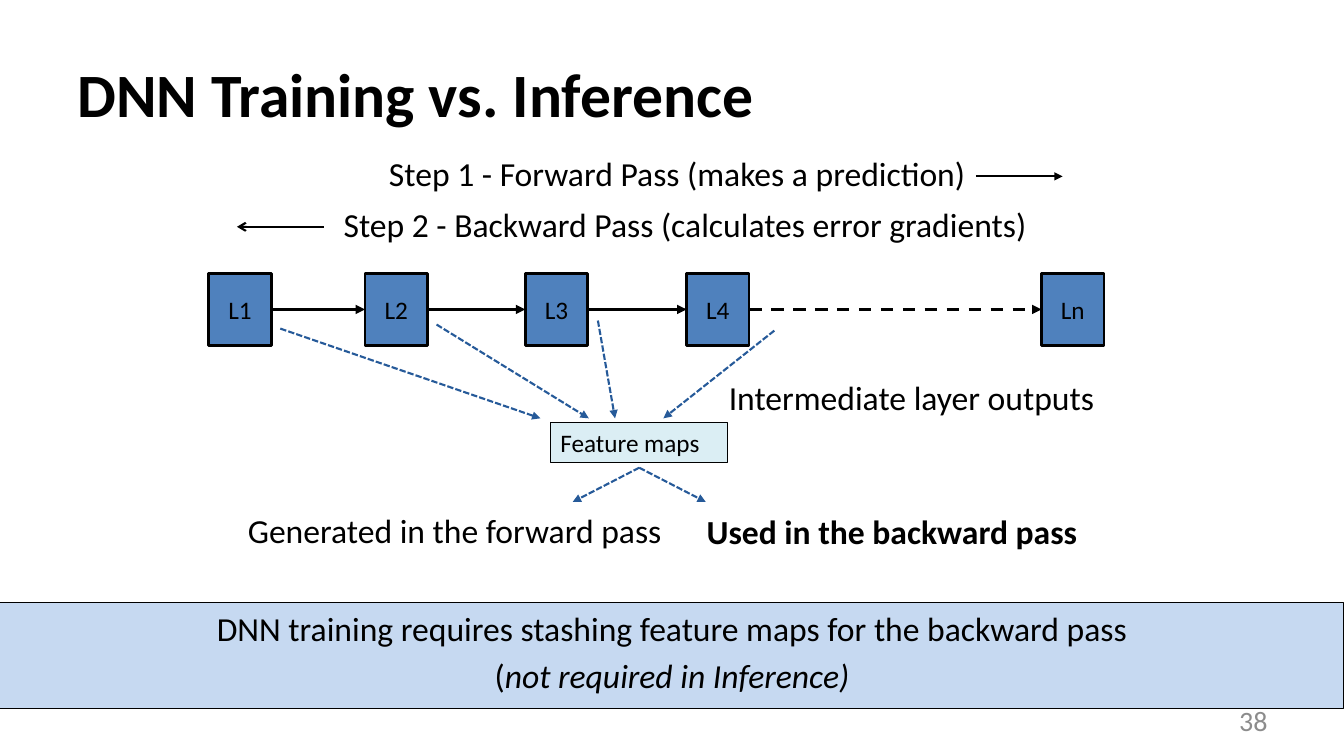
from lxml import etree
from pptx import Presentation
from pptx.dml.color import RGBColor
from pptx.enum.dml import MSO_LINE
from pptx.enum.shapes import MSO_CONNECTOR, MSO_SHAPE
from pptx.enum.text import MSO_ANCHOR, PP_ALIGN
from pptx.oxml.ns import qn
from pptx.util import Inches, Pt

BLACK = RGBColor(0x00, 0x00, 0x00)
GRAY = RGBColor(0x8C, 0x8C, 0x8C)
LAYER_BLUE = RGBColor(0x4F, 0x81, 0xBD)
FLOW_BLUE = RGBColor(0x26, 0x5A, 0x99)
MAP_FILL = RGBColor(0xDB, 0xEE, 0xF4)
BANNER_FILL = RGBColor(0xC6, 0xD9, 0xF1)

LEFT, CENTER, RIGHT = PP_ALIGN.LEFT, PP_ALIGN.CENTER, PP_ALIGN.RIGHT
TOP, MIDDLE = MSO_ANCHOR.TOP, MSO_ANCHOR.MIDDLE
DASH, SHORT_DASH = MSO_LINE.DASH, MSO_LINE.SQUARE_DOT
RECTANGLE, STRAIGHT = MSO_SHAPE.RECTANGLE, MSO_CONNECTOR.STRAIGHT

FONT = "Calibri"
LAYER_WIDTH, LAYER_HEIGHT = 0.62, 0.72


def style_text(shape, text, size, color=BLACK, bold=False, align=LEFT, anchor=TOP, wrap=False):
    """Fill a shape with text in one style."""
    frame = shape.text_frame
    frame.text = text
    frame.word_wrap = wrap
    frame.vertical_anchor = anchor
    for paragraph in frame.paragraphs:
        paragraph.alignment = align
        for run in paragraph.runs:
            style_run(run, size, color, bold)


def style_run(run, size, color=BLACK, bold=False, italic=False):
    """Set the font of one run."""
    run.font.name = FONT
    run.font.size = Pt(size)
    run.font.color.rgb = color
    run.font.bold = bold
    run.font.italic = italic


def add_label(slide, box, text, size=24, **style):
    """Add a text box."""
    label = slide.shapes.add_textbox(*map(Inches, box))
    style_text(label, text, size, **style)


def add_box(slide, box, fill, line_width):
    """Add a filled rectangle with a black outline."""
    shape = slide.shapes.add_shape(RECTANGLE, *map(Inches, box))
    shape.shadow.inherit = False
    shape.fill.solid()
    shape.fill.fore_color.rgb = fill
    shape.line.color.rgb = BLACK
    shape.line.width = Pt(line_width)
    return shape


def add_arrow(slide, start, end, color=BLACK, width=1.5, dash=None, head="triangle"):
    """Add a straight arrow pointing at its end."""
    arrow = slide.shapes.add_connector(STRAIGHT, *map(Inches, (*start, *end)))
    arrow.line.color.rgb = color
    arrow.line.width = Pt(width)
    if dash is not None:
        arrow.line.dash_style = dash
    outline = arrow.line._get_or_add_ln()
    etree.SubElement(outline, qn("a:tailEnd"), type=head)
    etree.SubElement(arrow._element.spPr, qn("a:effectLst"))


def add_steps(slide, left, top):
    """Add the two pass descriptions with their direction arrows."""
    add_label(slide, (left + 1.41, top, 5.97, 0.5), "Step 1 - Forward Pass (makes a prediction)")
    add_arrow(slide, (left + 7.33, top + 0.28), (left + 8.19, top + 0.28))
    add_label(slide, (left + 0.96, top + 0.5, 7.03, 0.5),
              "Step 2 - Backward Pass (calculates error gradients)")
    add_arrow(slide, (left + 0.86, top + 0.78), (left, top + 0.78), head="arrow")


def add_layers(slide, left, top):
    """Add the chain of network layers, the last link dashed."""
    layers = (("L1", 0), ("L2", 1.55), ("L3", 3.14), ("L4", 4.74), ("Ln", 8.26))
    middle = top + LAYER_HEIGHT / 2
    for name, offset in layers:
        layer = add_box(slide, (left + offset, top, LAYER_WIDTH, LAYER_HEIGHT), LAYER_BLUE, 2)
        style_text(layer, name, 18, align=CENTER, anchor=MIDDLE, wrap=True)
    for (_, start), (name, end) in zip(layers, layers[1:]):
        add_arrow(slide, (left + start + LAYER_WIDTH, middle), (left + end, middle),
                  width=2.25, dash=DASH if name == "Ln" else None)


def add_feature_maps(slide, left, top, width, height):
    """Add the feature map box, the flows into and out of it, and their labels."""
    feature_maps = add_box(slide, (left, top, width, height), MAP_FILL, 0.75)
    style_text(feature_maps, "Feature maps", 18)
    inputs = ((-2.68, -0.93, -0.1), (-1.13, -0.97, 0.38), (0.47, -1.01, 0.64), (2.22, -0.91, 1.12))
    for start_x, start_y, end_x in inputs:
        add_arrow(slide, (left + start_x, top + start_y), (left + end_x, top - 0.04),
                  FLOW_BLUE, dash=SHORT_DASH)
    center, bottom = left + width / 2, top + height
    for side in (-1, 1):
        add_arrow(slide, (center, bottom + 0.05), (center + side * 0.66, bottom + 0.39),
                  FLOW_BLUE, dash=SHORT_DASH)
    add_label(slide, (left + 1.67, top - 0.5, 3.86, 0.5), "Intermediate layer outputs")
    add_label(slide, (left - 3.1, bottom + 0.42, 4.35, 0.5), "Generated in the forward pass")
    add_label(slide, (left + 1.45, bottom + 0.43, 3.91, 0.5), "Used in the backward pass", bold=True)


def add_banner(slide, box):
    """Add the full-width conclusion."""
    banner = add_box(slide, box, BANNER_FILL, 0.75)
    style_text(banner, "DNN training requires stashing feature maps for the backward pass\n(",
               24, align=CENTER, wrap=True)
    ending = banner.text_frame.paragraphs[1].add_run()
    ending.text = "not required in Inference)"
    style_run(ending, 24, italic=True)
    for paragraph in banner.text_frame.paragraphs:
        paragraph.space_before = Pt(5)


def main():
    """Build and save the slide."""
    presentation = Presentation()
    presentation.slide_width, presentation.slide_height = Inches(13.33), Inches(7.5)
    slide = presentation.slides.add_slide(presentation.slide_layouts[6])
    add_label(slide, (0.67, 0.3, 12, 1.25), "DNN Training vs. Inference", 44,
              bold=True, anchor=MIDDLE, wrap=True)
    add_label(slide, (9.56, 6.95, 3.11, 0.4), "38", 20, color=GRAY,
              align=RIGHT, anchor=MIDDLE, wrap=True)
    add_banner(slide, (0, 5.98, 13.33, 1.05))
    add_steps(slide, 2.35, 1.47)
    add_layers(slide, 2.07, 2.71)
    add_feature_maps(slide, 5.46, 4.19, 1.76, 0.4)
    presentation.save("out.pptx")


if __name__ == "__main__":
    main()
